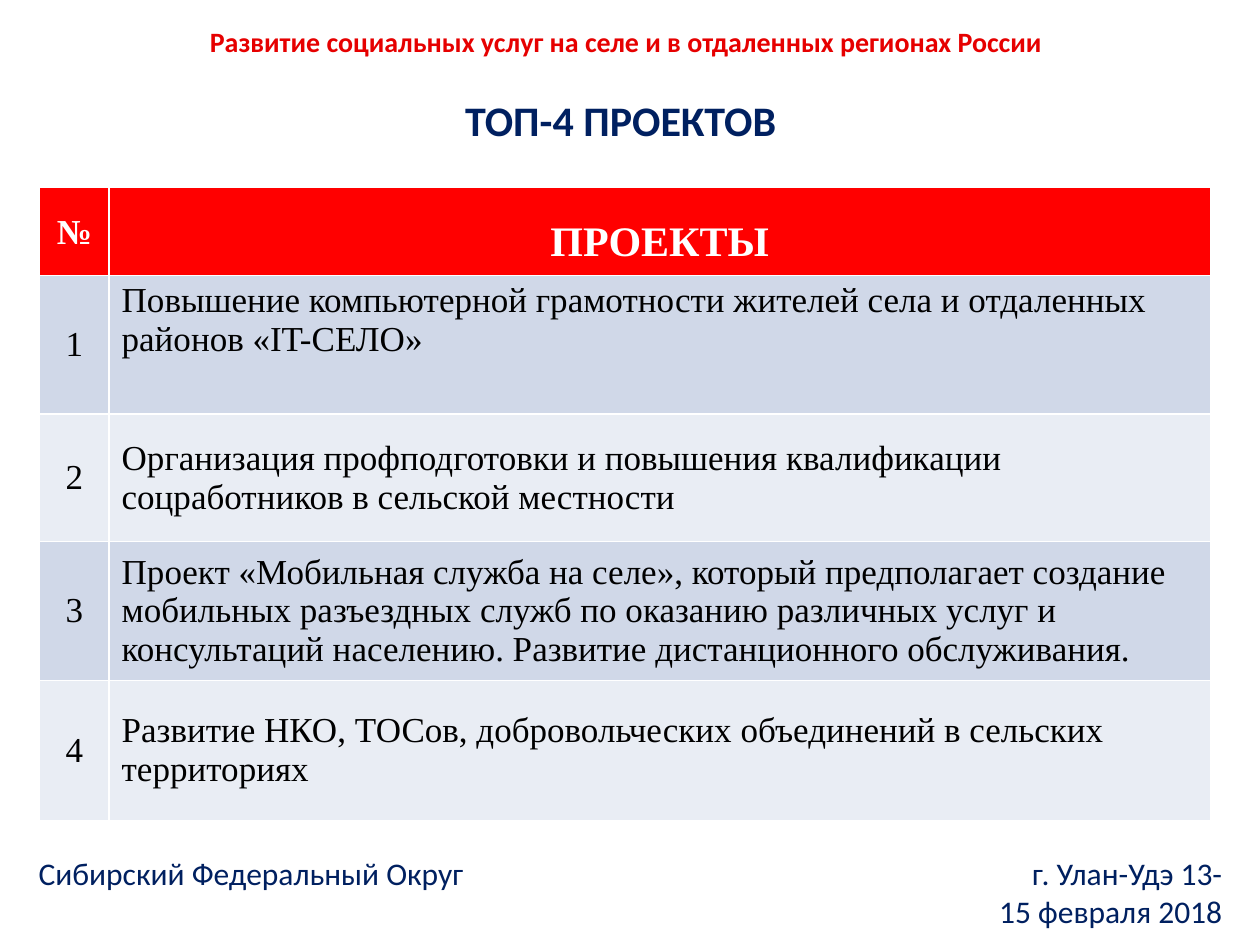
from pptx import Presentation
from pptx.dml.color import RGBColor
from pptx.enum.text import MSO_ANCHOR as Anchor, PP_ALIGN as Align
from pptx.util import Cm, Pt

COLORS = {
    "navy": "002060", "crimson": "E60000", "header": "FF0000",
    "odd": "D0D8E8", "even": "E9EDF4", "white": "FFFFFF", "black": "000000",
}
PROJECTS = [
    "Повышение компьютерной грамотности жителей села и отдаленных районов «IT-СЕЛО»",
    "Организация профподготовки и повышения квалификации соцработников в сельской местности",
    "Проект «Мобильная служба на селе», который предполагает создание мобильных "
    "разъездных служб по оказанию различных услуг и консультаций населению. "
    "Развитие дистанционного обслуживания.",
    "Развитие НКО, ТОСов, добровольческих объединений в сельских территориях",
]


def write(frame, text, color, align=Align.LEFT, spacing=1.0, **font_format):
    """Fill a text frame with one formatted paragraph."""
    frame.word_wrap = True
    frame.text = text
    paragraph = frame.paragraphs[0]
    paragraph.alignment = align
    paragraph.line_spacing = spacing
    for run in paragraph.runs:
        for attribute, value in font_format.items():
            setattr(run.font, attribute, value)
        run.font.color.rgb = RGBColor.from_string(COLORS[color])


prs = Presentation()
prs.slide_width, prs.slide_height = Cm(25.4), Cm(19.05)
slide = prs.slides.add_slide(prs.slide_layouts[5])

# Heading
title = slide.shapes.title
title.left, title.top, title.width, title.height = Cm(9.12), Cm(1.78), Cm(12.7), Cm(1.27)
title.text_frame.vertical_anchor = Anchor.TOP
write(title.text_frame, "ТОП-4 ПРОЕКТОВ", "navy", name="Calibri", size=Pt(24), bold=True)

theme = slide.shapes.add_textbox(Cm(1.8), Cm(0.33), Cm(21.64), Cm(1)).text_frame
theme.vertical_anchor = Anchor.MIDDLE
write(theme, "Развитие социальных услуг на селе и в отдаленных регионах России",
      "crimson", Align.CENTER, name="Calibri", size=Pt(16), bold=True)

# Project table
row_heights = [1.75, 2.8, 2.57, 2.8, 2.82]
table = slide.shapes.add_table(
    len(row_heights), 2, Cm(0.8), Cm(3.77), Cm(23.6), Cm(sum(row_heights))).table
for column, width in zip(table.columns, [1.4, 22.2]):
    column.width = Cm(width)
for row, height in zip(table.rows, row_heights):
    row.height = Cm(height)

entries = [("№", "ПРОЕКТЫ")] + [(str(n), text) for n, text in enumerate(PROJECTS, 1)]
for r, entry in enumerate(entries):
    is_header = r == 0
    fill = "header" if is_header else ("odd" if r % 2 else "even")
    for c, text in enumerate(entry):
        cell = table.cell(r, c)
        cell.fill.solid()
        cell.fill.fore_color.rgb = RGBColor.from_string(COLORS[fill])
        cell.vertical_anchor = Anchor.MIDDLE
        write(cell.text_frame, text, "white" if is_header else "black",
              Align.CENTER if is_header or c == 0 else Align.LEFT,
              1.5 if is_header else 1.0, name="Times New Roman",
              size=Pt(24 if is_header and c == 1 else 20), bold=is_header)
for r, c in [(0, 0), (1, 1)]:
    table.cell(r, c).vertical_anchor = Anchor.TOP

# Footer: district on the left, place and date on the right
for left, width, text, align in [
    (0.53, 12, "Сибирский Федеральный Округ", Align.LEFT),
    (18.89, 6, "г. Улан-Удэ 13-\v15 февраля 2018", Align.RIGHT),
]:
    footer = slide.shapes.add_textbox(Cm(left), Cm(17.22), Cm(width), Cm(1.5)).text_frame
    footer.margin_top = footer.margin_bottom = 0
    write(footer, text, "navy", align, name="Calibri", size=Pt(18))

prs.save("out.pptx")
